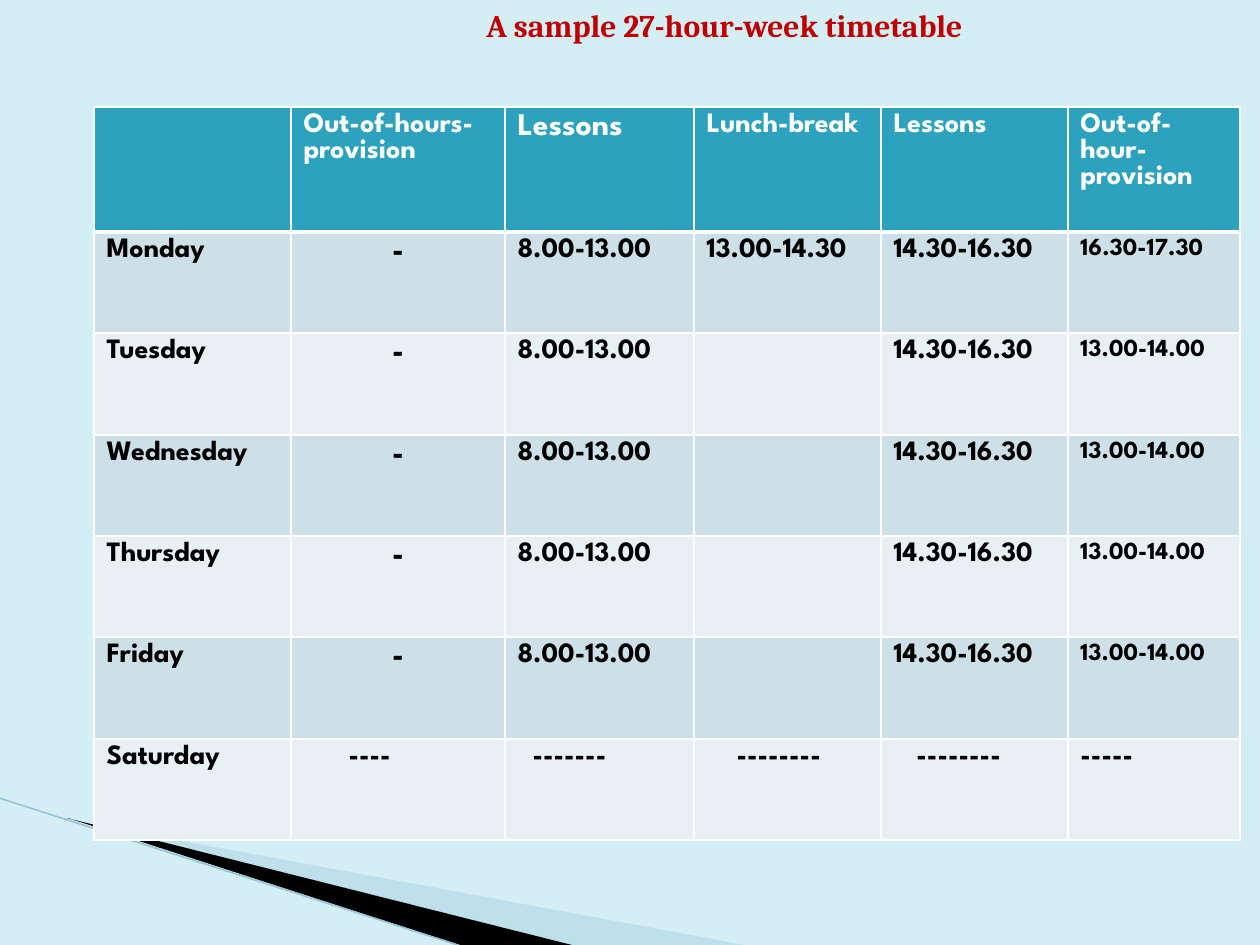
"""Build a slide with a weekly school timetable."""
from dataclasses import dataclass
from itertools import pairwise

from lxml import etree
from pptx import Presentation
from pptx import util as u
from pptx.dml.color import RGBColor
from pptx.enum import shapes, text
from pptx.oxml import ns

EMU_PER_PX = 914400 / 126


@dataclass(frozen=True)
class Theme:
    backdrop: str = "D3EEF5"
    title: str = "C00000"
    header: str = "2DA2BF"
    bands: tuple[str, str] = ("CDE0E8", "E8F0F4")
    white: str = "FFFFFF"
    black: str = "000000"
    pale_wedge: str = "A0CBDC"
    edge: str = "97C5D8"
    title_font: str = "Cambria"
    table_font: str = "League Spartan"
    large: int = 18
    medium: int = 16
    small: int = 14


THEME = Theme()


@dataclass(frozen=True)
class Entry:
    words: str = ""
    size: int = THEME.medium
    centred: bool = False
    indent: int = 0


@dataclass(frozen=True)
class Wedge:
    corners: tuple[tuple[int, int], ...]
    colour: str
    opacity: int = 100


WEDGES = (
    Wedge(((69, 820), (750, 946), (575, 946), (69, 819)), THEME.pale_wedge, 40),
    Wedge(((67, 818), (576, 946), (469, 948), (68, 818)), THEME.black),
)
COLUMN_EDGES = (94, 291, 505, 694, 881, 1068, 1240)
ROW_EDGES = (107, 232, 333, 435, 536, 637, 739, 840)
HEADER = (
    Entry(),
    Entry("Out-of-hours-provision"),
    Entry("Lessons", THEME.large),
    Entry("Lunch-break"),
    Entry("Lessons"),
    Entry("Out-of-hour-provision"),
)
SATURDAY = (
    Entry("Saturday"),
    Entry("----", indent=45),
    Entry("-------", indent=15),
    Entry("--------", indent=30),
    Entry("--------", indent=23),
    Entry("-----"),
)


def px(length: int) -> u.Emu:
    return u.Emu(round(length * EMU_PER_PX))


def rgb(colour: str) -> RGBColor:
    return RGBColor.from_string(colour)


def school_day(day: str, lunch: str = "", late: str = "13.00-14.00") -> tuple[Entry, ...]:
    return (
        Entry(day),
        Entry("-", THEME.large, centred=True),
        Entry("8.00-13.00"),
        Entry(lunch),
        Entry("14.30-16.30"),
        Entry(late, THEME.small),
    )


TIMETABLE = (
    HEADER,
    school_day("Monday", "13.00-14.30", "16.30-17.30"),
    *map(school_day, ("Tuesday", "Wednesday", "Thursday", "Friday")),
    SATURDAY,
)


def add_words(paragraph, words: str, font: str, size: int, colour: str) -> None:
    run = paragraph.add_run()
    run.text = words
    run.font.name = font
    run.font.size = u.Pt(size)
    run.font.bold = True
    run.font.color.rgb = rgb(colour)


def draw_wedge(slide, wedge: Wedge) -> None:
    start, *rest = wedge.corners
    builder = slide.shapes.build_freeform(*start, scale=EMU_PER_PX)
    builder.add_line_segments(rest, close=True)
    blade = builder.convert_to_shape()
    blade.shadow.inherit = False
    blade.fill.solid()
    blade.fill.fore_color.rgb = rgb(wedge.colour)
    blade.line.fill.background()
    if wedge.opacity < 100:
        tint = blade.fill._xPr.find(".//" + ns.qn("a:srgbClr"))
        etree.SubElement(tint, ns.qn("a:alpha"), val=str(wedge.opacity * 1000))


def draw_edge(slide) -> None:
    edge = slide.shapes.add_connector(
        shapes.MSO_CONNECTOR.STRAIGHT, px(-1), px(798), px(467), px(948)
    )
    edge.line.color.rgb = rgb(THEME.edge)
    edge.line.width = u.Pt(0.95)
    etree.SubElement(edge._element.spPr, ns.qn("a:effectLst"))


def draw_title(slide) -> None:
    frame = slide.shapes.add_textbox(px(243), 0, px(963), px(50)).text_frame
    frame.word_wrap = True
    frame.auto_size = text.MSO_AUTO_SIZE.SHAPE_TO_FIT_TEXT
    heading = frame.paragraphs[0]
    heading.alignment = text.PP_ALIGN.CENTER
    add_words(heading, "A sample 27-hour-week timetable",
              THEME.title_font, THEME.large, THEME.title)


def add_borders(cell, top: int, bottom: int) -> None:
    properties = cell._tc.get_or_add_tcPr()
    sides = (("L", 1), ("R", 1), ("T", top), ("B", bottom))
    for position, (side, points) in enumerate(sides):
        border = etree.Element(ns.qn(f"a:ln{side}"), w=str(u.Pt(points)))
        fill = etree.SubElement(border, ns.qn("a:solidFill"))
        etree.SubElement(fill, ns.qn("a:srgbClr"), val=THEME.white)
        properties.insert(position, border)


def fill_cell(cell, entry: Entry, row: int) -> None:
    cell.fill.solid()
    cell.fill.fore_color.rgb = rgb(THEME.bands[(row - 1) % 2] if row else THEME.header)
    add_borders(cell, top=3 if row == 1 else 1, bottom=1 if row else 3)
    if entry.indent:
        cell.margin_left = u.Inches(0.1) + px(entry.indent)
    paragraph = cell.text_frame.paragraphs[0]
    if entry.centred:
        paragraph.alignment = text.PP_ALIGN.CENTER
    if entry.words:
        add_words(paragraph, entry.words, THEME.table_font, entry.size,
                  THEME.black if row else THEME.white)


def draw_timetable(slide) -> None:
    left, right = COLUMN_EDGES[0], COLUMN_EDGES[-1]
    top, bottom = ROW_EDGES[0], ROW_EDGES[-1]
    grid = slide.shapes.add_table(
        len(TIMETABLE), len(HEADER), px(left), px(top), px(right - left), px(bottom - top)
    ).table
    for column, (start, end) in zip(grid.columns, pairwise(COLUMN_EDGES)):
        column.width = px(end - start)
    for line, (start, end) in zip(grid.rows, pairwise(ROW_EDGES)):
        line.height = px(end - start)
    for row, entries in enumerate(TIMETABLE):
        for column, entry in enumerate(entries):
            fill_cell(grid.cell(row, column), entry, row)


def main() -> None:
    deck = Presentation()
    deck.slide_width, deck.slide_height = px(1260), px(945)
    slide = deck.slides.add_slide(deck.slide_layouts[6])
    slide.background.fill.solid()
    slide.background.fill.fore_color.rgb = rgb(THEME.backdrop)
    for wedge in WEDGES:
        draw_wedge(slide, wedge)
    draw_edge(slide)
    draw_title(slide)
    draw_timetable(slide)
    deck.save("out.pptx")


if __name__ == "__main__":
    main()
